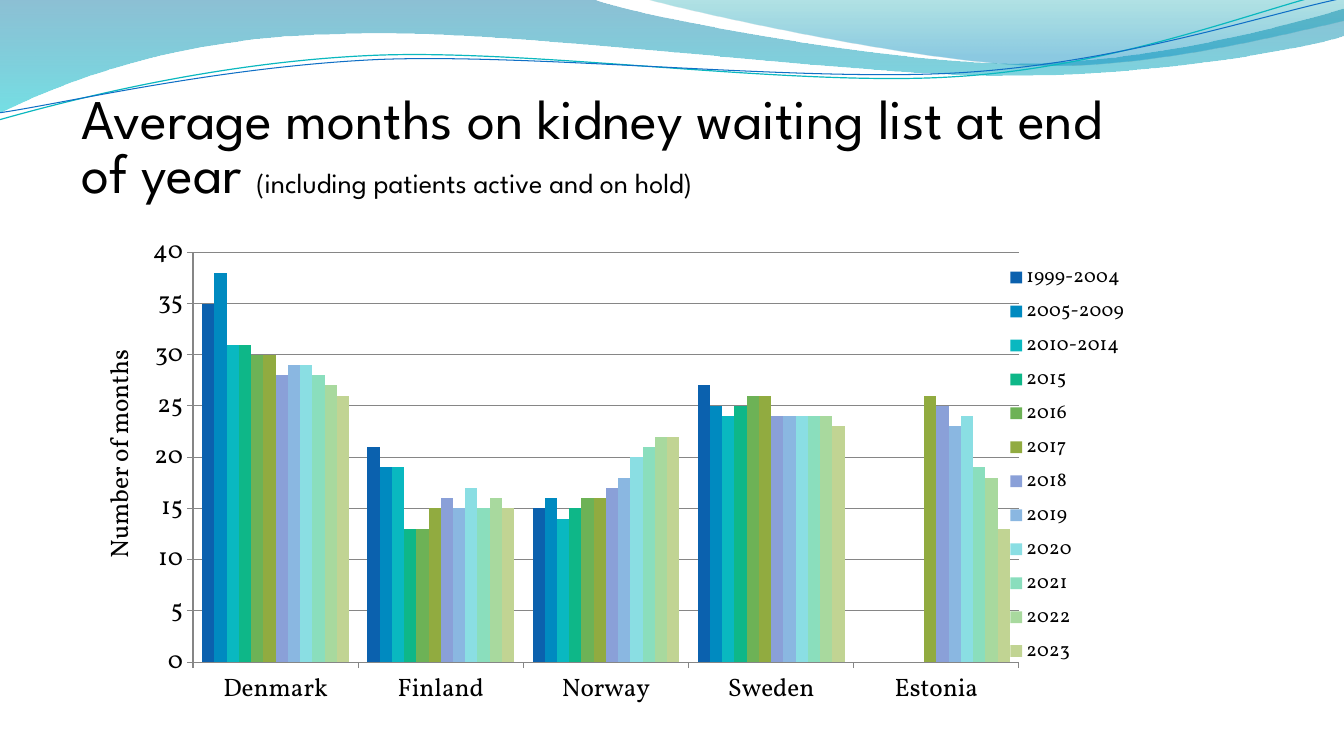
import math

import pptx
import pptx.chart.data
import pptx.dml.color
import pptx.enum.chart
import pptx.enum.text
import pptx.oxml
import pptx.oxml.ns
import pptx.util

Inches, Pt = pptx.util.Inches, pptx.util.Pt
RGB = pptx.dml.color.RGBColor
qn = pptx.oxml.ns.qn

BLACK = RGB(0, 0, 0)
GREY = RGB(0x86, 0x86, 0x86)
BLUE = RGB(0x0F, 0x6F, 0xC6)
TEAL = RGB(0x0A, 0xB8, 0xBF)
HEAD, BODY = "League Spartan", "Vollkorn"

TITLE = [("Average months on kidney waiting list at end of year ", 40),
         ("(including patients active and on hold)", 20)]
LANDS = ["Denmark", "Finland", "Norway", "Sweden", "Estonia"]
YEARS = [
    ("1999-2004", (35, 21, 15, 27, None), RGB(0x0B, 0x61, 0xAE)),
    ("2005-2009", (38, 19, 16, 25, None), RGB(0x00, 0x8A, 0xC0)),
    ("2010-2014", (31, 19, 14, 24, None), RGB(0x09, 0xB8, 0xC0)),
    ("2015", (31, 13, 15, 25, None), RGB(0x0E, 0xB7, 0x88)),
    ("2016", (30, 13, 16, 26, None), RGB(0x6D, 0xB2, 0x56)),
    ("2017", (30, 15, 16, 26, 26), RGB(0x91, 0xAB, 0x40)),
    ("2018", (28, 16, 17, 24, 25), RGB(0x8A, 0xA0, 0xD8)),
    ("2019", (29, 15, 18, 24, 23), RGB(0x8A, 0xB7, 0xE1)),
    ("2020", (29, 17, 20, 24, 24), RGB(0x8A, 0xDE, 0xE3)),
    ("2021", (28, 15, 21, 24, 19), RGB(0x8A, 0xDE, 0xBD)),
    ("2022", (27, 16, 22, 24, 18), RGB(0xA8, 0xD9, 0x9E)),
    ("2023", (26, 15, 22, 23, 13), RGB(0xC1, 0xD4, 0x93)),
]

# Each wave is a start point, then steps: 2 numbers are a line, 6 a curve.
BANDS = [
    ([(0, 0), (5.87, -0.01), (6.34, 0.17, 8.84, 0.63, 10.11, 0.63),
      (11.37, 0.63, 12.77, 0.26, 13.33, 0.09), (13.34, 0.36),
      (13.11, 0.44, 11.59, 0.76, 9.94, 0.75),
      (8.29, 0.75, 5.09, 0.28, 3.43, 0.34),
      (1.72, 0.36, 0.61, 0.83, -0.02, 1.13), (0, 0)],
     [(0, RGB(0x00, 0x74, 0xA1), 45), (1, RGB(0x00, 0xC6, 0xCF), 55)]),
    ([(6.38, -0.01), (6.79, 0.11, 9.09, 0.62, 10.25, 0.65),
      (11.4, 0.69, 12.82, 0.32, 13.33, 0.21), (13.33, 0), (6.38, -0.01)],
     [(0, RGB(0x00, 0xA1, 0xA9), 30), (0.8, RGB(0x00, 0x8B, 0xBF), 45)]),
]
TILT = 2.7
CURVES = [
    ([(-0.01, 1.19), (0.63, 1.01, 2.1, 0.62, 3.69, 0.55),
      (5.27, 0.48, 7.89, 0.87, 9.49, 0.76),
      (11.1, 0.66, 12.51, 0.08, 13.3, -0.1)], TEAL, 0.85),
    ([(-0.01, 1.12), (0.62, 1.03, 2.18, 0.66, 3.77, 0.59),
      (5.37, 0.53, 7.96, 0.82, 9.55, 0.72),
      (11.14, 0.62, 12.55, 0.14, 13.33, -0.02)], BLUE, 0.75),
]


def write(para, text, size=18, face=BODY, color=BLACK):
    run = para.add_run()
    run.text = text
    style(run.font, size, face, color)


def style(font, size, face=BODY, color=BLACK):
    font.size, font.name, font.bold = Pt(size), face, False
    font.color.rgb = color


def turn(x, y, angle):
    a = math.radians(angle)
    return (x * math.cos(a) - y * math.sin(a),
            x * math.sin(a) + y * math.cos(a))


def wave(slide, steps, close=False, tilt=0):
    """Draw an outline of lines and cubic curves, stored level and tilted back."""
    dots = [turn(Inches(step[i]), Inches(step[i + 1]), tilt)
            for step in steps for i in range(0, len(step), 2)]
    pen = slide.shapes.build_freeform(*dots[0], scale=1.0)
    pen.add_line_segments(dots[1:], close=close)
    shape = pen.convert_to_shape()
    shape.shadow.inherit = False

    lines = iter(list(shape._element.iter(qn("a:lnTo"))))
    for step in steps[1:]:
        first = next(lines)
        if len(step) == 6:
            curve = first.makeelement(qn("a:cubicBezTo"), {})
            first.addprevious(curve)
            for line in (first, next(lines), next(lines)):
                curve.append(line[0])
                line.getparent().remove(line)

    wide, high = shape.width / 2, shape.height / 2
    x, y = turn(shape.left + wide, shape.top + high, -tilt)
    shape.left, shape.top = round(x - wide), round(y - high)
    shape.rotation = -tilt
    return shape


def draw_waves(slide):
    for steps, stops in BANDS:
        band = wave(slide, steps, close=True)
        band.line.fill.background()
        band.fill.gradient()
        band.fill.gradient_angle = 270
        for stop, (spot, color, alpha) in zip(band.fill.gradient_stops, stops):
            stop.position = spot
            stop.color.rgb = color
            tone = stop._gs.find(qn("a:srgbClr"))
            tone.append(tone.makeelement(qn("a:alpha"), {"val": str(alpha * 1000)}))
    for steps, color, width in CURVES:
        curve = wave(slide, steps, tilt=TILT)
        curve.fill.background()
        curve.line.color.rgb = color
        curve.line.width = Pt(width)


def place(node, index, box, inner=False):
    """Give a chart part a fixed place, as shares of the chart."""
    for old in node.findall(qn("c:layout")):
        node.remove(old)
    target = '<c:layoutTarget val="inner"/>' if inner else ""
    modes = "".join(f'<c:{k}Mode val="edge"/>' for k in "xy")
    sizes = "".join(f'<c:{k} val="{v}"/>' for k, v in zip("xywh", box))
    node.insert(index, pptx.oxml.parse_xml(
        f'<c:layout {pptx.oxml.ns.nsdecls("c")}><c:manualLayout>'
        f'{target}{modes}{sizes}</c:manualLayout></c:layout>'))


def draw_chart(slide):
    kinds = pptx.enum.chart
    data = pptx.chart.data.CategoryChartData(number_format="0")
    data.categories = LANDS
    for name, months, _ in YEARS:
        data.add_series(name, months)
    chart = slide.shapes.add_chart(
        kinds.XL_CHART_TYPE.COLUMN_CLUSTERED, Inches(0.85), Inches(2.31),
        Inches(10.64), Inches(4.84), data).chart
    chart.has_title = False
    style(chart.font, 18)

    plot = chart.plots[0]
    plot.gap_width, plot.overlap, plot.vary_by_categories = 150, 0, False
    for series, (_, _, color) in zip(plot.series, YEARS):
        series.format.fill.solid()
        series.format.fill.fore_color.rgb = color
        series.invert_if_negative = False

    value = chart.value_axis
    value.minimum_scale, value.maximum_scale, value.major_unit = 0, 40, 5
    value.has_major_gridlines = True
    value.tick_labels.number_format = "0"
    value.tick_labels.number_format_is_linked = False
    write(value.axis_title.text_frame.paragraphs[0], "Number of months")
    for axis in (value, chart.category_axis):
        axis.major_tick_mark = kinds.XL_TICK_MARK.OUTSIDE
        style(axis.tick_labels.font, 18)
    for part in (value, chart.category_axis, value.major_gridlines):
        part.format.line.color.rgb = GREY
        part.format.line.width = Pt(0.75)

    chart.has_legend = True
    legend = chart.legend
    legend.position = kinds.XL_LEGEND_POSITION.RIGHT
    legend.include_in_layout = False
    style(legend.font, 14)
    place(legend._element, 1, (0.85, 0.05, 0.13, 0.85))
    place(value.axis_title._element, 1, (0.01, 0.23))
    place(plot._element.getparent(), 0, (0.1, 0.04, 0.77, 0.84), inner=True)


def draw_title(slide):
    title = slide.shapes.title
    title.left, title.top = Inches(0.71), Inches(0.91)
    title.width, title.height = Inches(10.78), Inches(1.25)
    frame = title.text_frame
    frame.word_wrap = True
    frame.auto_size = pptx.enum.text.MSO_AUTO_SIZE.NONE
    frame.vertical_anchor = pptx.enum.text.MSO_ANCHOR.TOP
    para = frame.paragraphs[0]
    para.alignment = pptx.enum.text.PP_ALIGN.LEFT
    para.line_spacing = 0.8
    for text, size in TITLE:
        write(para, text, size=size, face=HEAD)
    slide.shapes._spTree.append(title._element)


def main():
    deck = pptx.Presentation()
    deck.slide_width, deck.slide_height = Inches(13.33), Inches(7.5)
    slide = deck.slides.add_slide(deck.slide_layouts[5])
    draw_waves(slide)
    draw_title(slide)
    draw_chart(slide)
    deck.save("out.pptx")


if __name__ == "__main__":
    main()
